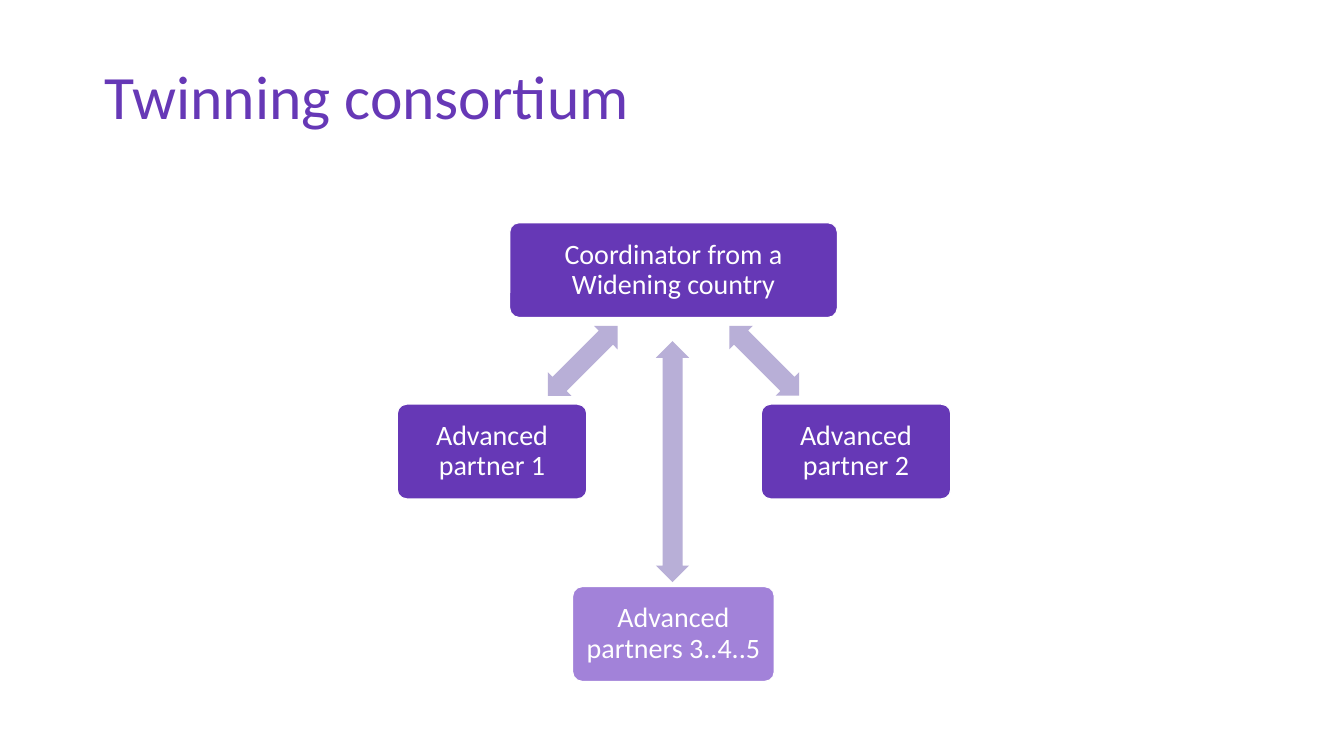
import pptx
import pptx.util
import pptx.dml.color
import pptx.enum.shapes
import pptx.enum.text

Inches = pptx.util.Inches
Pt = pptx.util.Pt
SHAPES = pptx.enum.shapes.MSO_SHAPE
ALIGN = pptx.enum.text.PP_ALIGN
MIDDLE = pptx.enum.text.MSO_ANCHOR.MIDDLE

THEME = {
    "font": "Calibri",
    "title_size": 44,
    "box_size": 20,
    "purple": "6638B6",
    "lilac": "A282D9",
    "arrow": "B8AFD7",
    "white": "FFFFFF",
}

TITLE = "Twinning consortium"
AXIS = 6.68
ROW_TOPS = [2.21, 4.01, 5.82]
BOX_HEIGHT = 0.94
ARROW_HEIGHT = 0.33

PARTNERS = [
    {"text": "Coordinator from a Widening country", "row": 0, "offset": 0, "width": 3.25, "fill": "purple"},
    {"text": "Advanced partner 2", "row": 1, "offset": 1.81, "width": 1.88, "fill": "purple"},
    {"text": "Advanced partners 3..4..5", "row": 2, "offset": 0, "width": 2, "fill": "lilac"},
    {"text": "Advanced partner 1", "row": 1, "offset": -1.8, "width": 1.88, "fill": "purple"},
]

ARROWS = [
    {"offset": 0.9, "middle": 3.58, "length": 0.98, "rotation": 45},
    {"offset": -0.01, "middle": 4.58, "length": 2.39, "rotation": 90},
    {"offset": -0.9, "middle": 3.58, "length": 0.98, "rotation": 315},
]


def color(name):
    return pptx.dml.color.RGBColor.from_string(THEME[name])


def set_attributes(target, values):
    for name, value in values.items():
        setattr(target, name, value)


def write_text(shape, text, size, color_name, alignment, inset):
    frame = shape.text_frame
    frame.text = text
    set_attributes(frame, {
        "word_wrap": True,
        "auto_size": pptx.enum.text.MSO_AUTO_SIZE.NONE,
        "vertical_anchor": MIDDLE,
        "margin_left": inset,
        "margin_right": inset,
        "margin_top": inset,
        "margin_bottom": inset,
    })
    paragraph = frame.paragraphs[0]
    set_attributes(paragraph, {"alignment": alignment, "line_spacing": 0.9, "space_before": Pt(0)})
    set_attributes(paragraph.font, {"name": THEME["font"], "size": Pt(THEME[size])})
    paragraph.font.color.rgb = color(color_name)


def add_filled_shape(slide, kind, left, top, width, height, fill, adjustments):
    shape = slide.shapes.add_shape(kind, Inches(left), Inches(top), Inches(width), Inches(height))
    shape.shadow.inherit = False
    shape.fill.solid()
    shape.fill.fore_color.rgb = color(fill)
    for index, value in enumerate(adjustments):
        shape.adjustments[index] = value
    return shape


def add_partner(slide, partner):
    left = AXIS + partner["offset"] - partner["width"] / 2
    shape = add_filled_shape(slide, SHAPES.ROUNDED_RECTANGLE, left, ROW_TOPS[partner["row"]],
                             partner["width"], BOX_HEIGHT, partner["fill"], [0.1])
    shape.line.color.rgb = color("white")
    shape.line.width = Pt(0.85)
    write_text(shape, partner["text"], "box_size", "white", ALIGN.CENTER, Inches(0.08))


def add_arrow(slide, arrow):
    left = AXIS + arrow["offset"] - arrow["length"] / 2
    shape = add_filled_shape(slide, SHAPES.LEFT_RIGHT_ARROW, left, arrow["middle"] - ARROW_HEIGHT / 2,
                             arrow["length"], ARROW_HEIGHT, "arrow", [0.6, 0.5])
    shape.line.fill.background()
    shape.rotation = arrow["rotation"]


def main():
    presentation = pptx.Presentation()
    set_attributes(presentation, {"slide_width": Inches(13.33), "slide_height": Inches(7.5)})
    slide = presentation.slides.add_slide(presentation.slide_layouts[5])
    title = slide.shapes.title
    set_attributes(title, {
        "left": Inches(0.94), "top": Inches(0), "width": Inches(8.88), "height": Inches(1.97),
    })
    write_text(title, TITLE, "title_size", "purple", ALIGN.LEFT, Inches(0.1))
    for partner in PARTNERS:
        add_partner(slide, partner)
    for arrow in ARROWS:
        add_arrow(slide, arrow)
    presentation.save("out.pptx")


if __name__ == "__main__":
    main()
